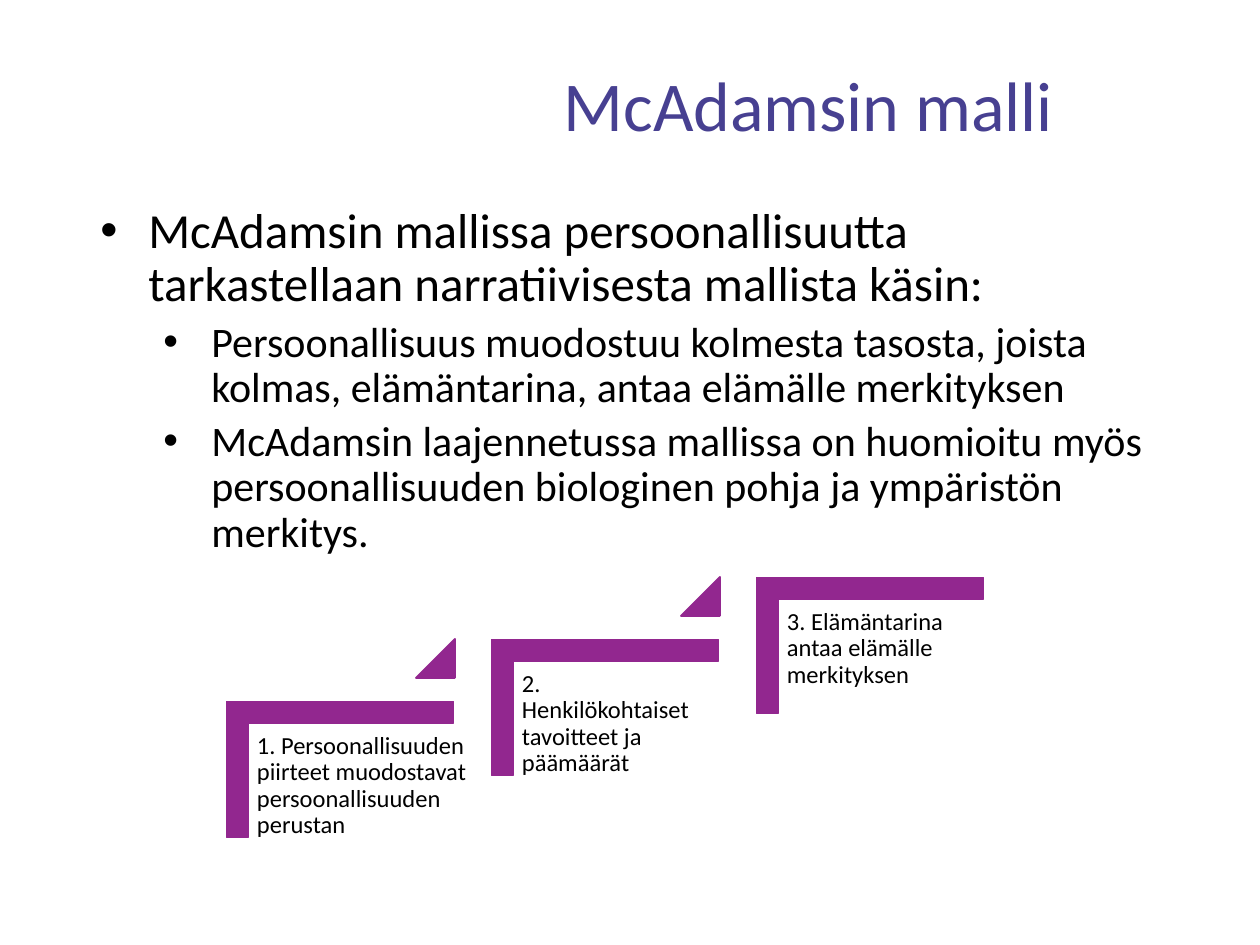
from dataclasses import dataclass

from lxml.etree import SubElement
from pptx import Presentation
from pptx.dml.color import RGBColor
from pptx.enum.shapes import MSO_SHAPE as Preset
from pptx.enum.text import MSO_ANCHOR as Anchor, MSO_AUTO_SIZE as AutoSize, PP_ALIGN as Align
from pptx.oxml.ns import qn
from pptx.util import Emu, Pt

PX = 914400 // 126


@dataclass(frozen=True)
class Theme:
    font: str = "Calibri"
    title_color: str = "474091"
    text_color: str = "000000"
    accent: str = "92278F"
    title_size: int = 40
    body_sizes: tuple = (28, 24)
    step_size: int = 14
    line_spacing: float = 0.9


class SlideBuilder:
    def __init__(self, slide, theme):
        self.slide = slide
        self.theme = theme

    def text_box(self, box, inset=None, **frame_format):
        """Add an empty wrapping text box and return its frame."""
        shape = self.slide.shapes.add_textbox(*(Emu(n * PX) for n in box))
        frame = shape.text_frame
        frame.word_wrap = True
        if inset is not None:
            for side in ("left", "top", "right", "bottom"):
                setattr(frame, f"margin_{side}", Emu(inset * PX))
        for name, value in frame_format.items():
            setattr(frame, name, value)
        return frame

    def fill_paragraph(self, paragraph, text, size, color, **paragraph_format):
        run = paragraph.add_run()
        run.text = text
        run.font.color.rgb = RGBColor.from_string(color)
        for name, value in {"name": self.theme.font, "size": Pt(size)}.items():
            setattr(run.font, name, value)
        paragraph_format["line_spacing"] = self.theme.line_spacing
        for name, value in paragraph_format.items():
            setattr(paragraph, name, value)

    def title(self, box, text):
        frame = self.text_box(box, vertical_anchor=Anchor.MIDDLE)
        self.fill_paragraph(frame.paragraphs[0], text, self.theme.title_size,
                            self.theme.title_color, alignment=Align.CENTER)

    def bullets(self, box, items):
        frame = self.text_box(box, auto_size=AutoSize.SHAPE_TO_FIT_TEXT)
        for index, (level, text) in enumerate(items):
            paragraph = frame.add_paragraph() if index else frame.paragraphs[0]
            properties = paragraph._p.get_or_add_pPr()
            properties.set("marL", str((48 + 63 * level) * PX))
            properties.set("indent", str(-48 * PX))
            SubElement(properties, qn("a:buFont")).set("typeface", "Arial")
            SubElement(properties, qn("a:buChar")).set("char", "•")
            self.fill_paragraph(paragraph, text, self.theme.body_sizes[level],
                                self.theme.text_color, level=level,
                                space_before=Pt(5 if index else 0))

    def label(self, box, text):
        frame = self.text_box(box, inset=8)
        self.fill_paragraph(frame.paragraphs[0], text, self.theme.step_size,
                            self.theme.text_color)

    def accent_shape(self, preset, box, adjustments, rotation=0):
        shape = self.slide.shapes.add_shape(preset, *(Emu(n * PX) for n in box))
        for index, value in enumerate(adjustments):
            shape.adjustments[index] = value
        color = RGBColor.from_string(self.theme.accent)
        shape.fill.solid()
        shape.fill.fore_color.rgb = color
        shape.line.color.rgb = color
        shape.line.width = Pt(1)
        shape.shadow.inherit = False
        shape.rotation = rotation


def main():
    presentation = Presentation()
    presentation.slide_width = Emu(1260 * PX)
    presentation.slide_height = Emu(945 * PX)
    slide = presentation.slides.add_slide(presentation.slide_layouts[6])
    builder = SlideBuilder(slide, Theme())

    # Title
    builder.title((426, 38, 765, 142), "McAdamsin malli")

    # Rising steps, each but the last followed by a triangle
    steps = [
        ("1. Persoonallisuuden piirteet muodostavat persoonallisuuden perustan", 232),
        ("2. Henkilökohtaiset tavoitteet ja päämäärät", 205),
        ("3. Elämäntarina antaa elämälle merkityksen", 205),
    ]
    for index, (text, width) in enumerate(steps):
        x, y = 265 * index, -62 * index
        builder.accent_shape(Preset.CORNER, (272 + x, 656 + y, 136, 227), (0.16, 0.16), 90)
        builder.label((249 + x, 725 + y, width, 180), text)
        if index < len(steps) - 1:
            builder.accent_shape(Preset.ISOSCELES_TRIANGLE, (416 + x, 639 + y, 39, 39), (1,))

    # Body text
    builder.bullets((88, 200, 1076, 369), [
        (0, "McAdamsin mallissa persoonallisuutta tarkastellaan narratiivisesta "
            "mallista käsin:"),
        (1, "Persoonallisuus muodostuu kolmesta tasosta, joista kolmas, elämäntarina, "
            "antaa elämälle merkityksen"),
        (1, "McAdamsin laajennetussa mallissa on huomioitu myös persoonallisuuden "
            "biologinen pohja ja ympäristön merkitys."),
    ])

    presentation.save("out.pptx")


if __name__ == "__main__":
    main()
